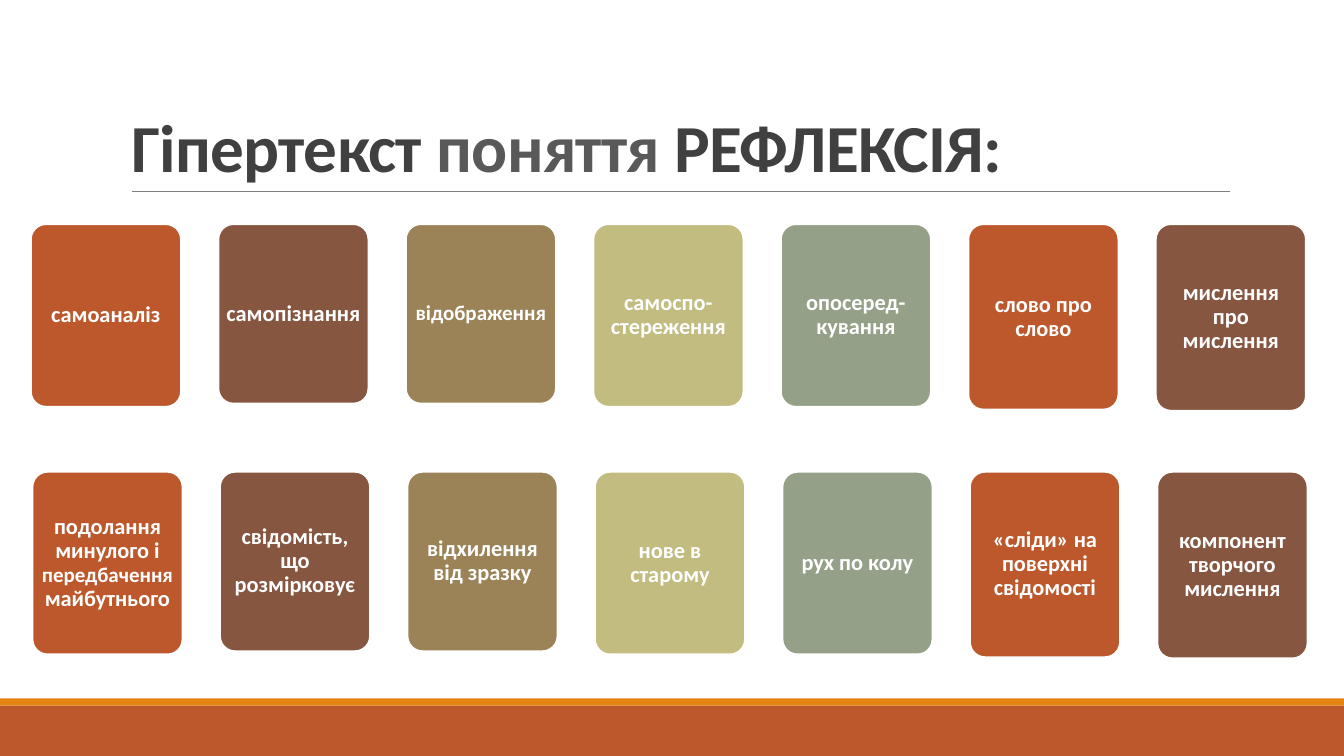
from lxml import etree
from pptx import Presentation
from pptx import util as u
from pptx.dml.color import RGBColor
from pptx.enum import shapes, text
from pptx.oxml.ns import qn

ORANGE, BROWN = "BD582C", "865640"
COLUMN_COLOURS = [ORANGE, BROWN, "9B8357", "C2BC80", "94A088", ORANGE, BROWN]
CARD_HEIGHTS = [4.6, 4.52, 4.52, 4.6, 4.6, 4.67, 4.7]
CARD_WIDTH, CARD_PITCH = 3.78, 4.725
# Each row: left, top, cards; a card is a list of (text, size) spans
ROWS = [
    (0.78, 5.65, [
        [("самоаналіз", 16)],
        [("самопізнання", 16)],
        [("відображення", 15)],
        [("самоспо-стереження", 16)],
        [("опосеред-кування", 16)],
        [("слово про слово", 16)],
        [("мислення про мислення", 16)],
    ]),
    (0.82, 11.89, [
        [("подолання минулого і ", 16), ("передбачення", 15), (" майбутнього", 16)],
        [("свідомість, що розмірковує", 16)],
        [("відхилення від зразку", 16)],
        [("нове в старому", 16)],
        [("рух по колу", 16)],
        [("«сліди» на поверхні свідомості", 16)],
        [("компонент творчого мислення", 16)],
    ]),
]


def add_span(para, words, size, colour, spacing=0):
    """Add a bold run; spacing is between letters, in hundredths of a point."""
    span = para.add_run()
    span.text = words
    span.font.name = "Calibri"
    span.font.size = u.Pt(size)
    span.font.bold = True
    span.font.color.rgb = RGBColor.from_string(colour)
    if spacing:
        span.font._element.set("spc", str(spacing))


def add_block(page, kind, left, top, width, height, fill, outline=None):
    block = page.shapes.add_shape(kind, u.Cm(left), u.Cm(top), u.Cm(width), u.Cm(height))
    block.shadow.inherit = False
    block.fill.solid()
    block.fill.fore_color.rgb = RGBColor.from_string(fill)
    if outline:
        block.line.color.rgb = RGBColor.from_string(outline)
        block.line.width = u.Pt(1.25)
    else:
        block.line.fill.background()
    return block


deck = Presentation()
deck.slide_width, deck.slide_height = u.Cm(33.87), u.Cm(19.05)
page = deck.slides.add_slide(deck.slide_layouts[5])

# Footer bars
add_block(page, shapes.MSO_SHAPE.RECTANGLE, 0, 17.78, 33.87, 1.27, ORANGE)
add_block(page, shapes.MSO_SHAPE.RECTANGLE, 0, 17.6, 33.87, 0.18, "E48312")

# Title and the rule below it
title = page.shapes.title
title.left, title.top, title.width, title.height = u.Cm(3.05), u.Cm(0.79), u.Cm(27.94), u.Cm(4.03)
title.text_frame.vertical_anchor = text.MSO_ANCHOR.BOTTOM
title.text_frame.auto_size = text.MSO_AUTO_SIZE.NONE
para = title.text_frame.paragraphs[0]
para.alignment = text.PP_ALIGN.LEFT
para.line_spacing = 0.85
for words, colour in [("Гіпертекст ", "404040"), ("поняття", "595959"), (" РЕФЛЕКСІЯ:", "404040")]:
    add_span(para, words, 48, colour, spacing=-50)

rule = page.shapes.add_connector(
    shapes.MSO_CONNECTOR.STRAIGHT, u.Cm(3.32), u.Cm(4.82), u.Cm(31), u.Cm(4.82))
rule.line.color.rgb = RGBColor.from_string("808080")
rule.line.width = u.Pt(0.5)
etree.SubElement(rule._element.spPr, qn("a:effectLst"))

# Two rows of cards
for left, top, cards in ROWS:
    for column, (spans, colour, height) in enumerate(zip(cards, COLUMN_COLOURS, CARD_HEIGHTS)):
        card = add_block(page, shapes.MSO_SHAPE.ROUNDED_RECTANGLE, left + column * CARD_PITCH,
                         top, CARD_WIDTH, height, colour, outline="FFFFFF")
        card.adjustments[0] = 0.1
        frame = card.text_frame
        frame.word_wrap = True
        frame.vertical_anchor = text.MSO_ANCHOR.MIDDLE
        frame.margin_left = frame.margin_right = u.Cm(0.08)
        frame.margin_top = frame.margin_bottom = u.Cm(0.05)
        para = frame.paragraphs[0]
        para.alignment = text.PP_ALIGN.CENTER
        para.line_spacing = 0.9
        for words, size in spans:
            add_span(para, words, size, "FFFFFF")

deck.save("out.pptx")
